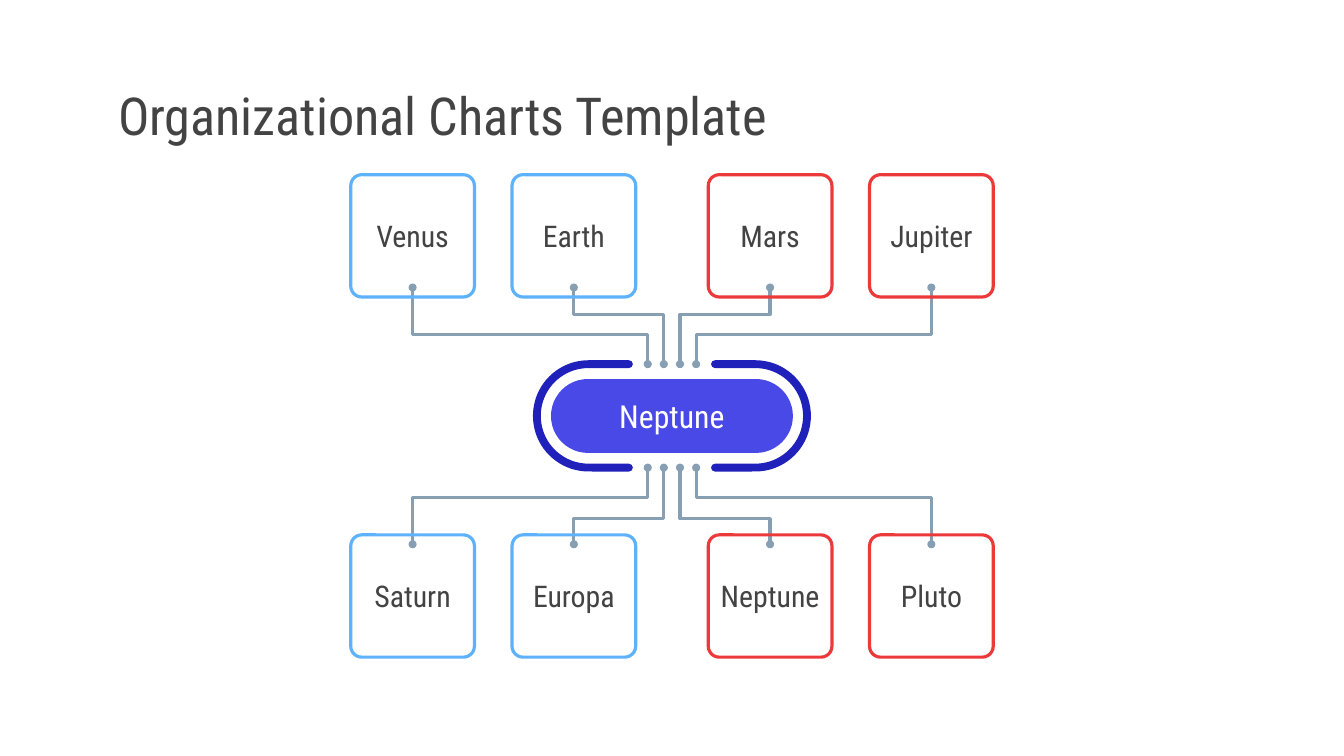
from dataclasses import dataclass
from math import cos, pi, sin

from lxml import etree
from pptx import Presentation
from pptx.dml.color import RGBColor
from pptx.enum.shapes import MSO_SHAPE
from pptx.enum.text import MSO_ANCHOR, PP_ALIGN
from pptx.oxml.ns import qn
from pptx.shapes.autoshape import Shape
from pptx.slide import Slide
from pptx.util import Inches, Pt

ROUNDED = MSO_SHAPE.ROUNDED_RECTANGLE
OVAL = MSO_SHAPE.OVAL
MIDDLE = MSO_ANCHOR.MIDDLE
LEFT, CENTER = PP_ALIGN.LEFT, PP_ALIGN.CENTER

WHITE = RGBColor(0xFF, 0xFF, 0xFF)
DARK_GRAY = RGBColor(0x43, 0x43, 0x43)
SLATE = RGBColor(0x86, 0x9F, 0xB2)
SKY = RGBColor(0x5E, 0xB2, 0xFC)
RED = RGBColor(0xEC, 0x3A, 0x3B)
VIOLET = RGBColor(0x49, 0x49, 0xE7)
NAVY = RGBColor(0x20, 0x20, 0xBA)

FONT = "Roboto Condensed"
SLIDE_WIDTH = Inches(10)
SLIDE_HEIGHT = SLIDE_WIDTH * 9 // 16
BOX_WIDTH, BOX_HEIGHT = 0.92, 0.91
DOT_SIZE = 0.06
LINE_WIDTH = 1.7
RING_WIDTH = 4.2
ARC_STEPS = 40

Point = tuple[float, float]


@dataclass(frozen=True)
class Column:
    box_x: float
    port_x: float
    color: RGBColor
    outer: bool


@dataclass(frozen=True)
class Row:
    names: tuple[str, ...]
    box_top: float
    dot_y: float
    outer_bend_y: float
    inner_bend_y: float
    port_y: float


COLUMNS = (
    Column(3.07, 4.82, SKY, True),
    Column(4.27, 4.94, SKY, False),
    Column(5.73, 5.06, RED, False),
    Column(6.93, 5.18, RED, True),
)
ROWS = (
    Row(("Venus", "Earth", "Mars", "Jupiter"), 1.3, 2.14, 2.49, 2.34, 2.71),
    Row(("Saturn", "Europa", "Neptune", "Pluto"), 3.98, 4.05, 3.7, 3.86, 3.48),
)


def write_text(shape: Shape, text: str, size: float, color: RGBColor,
               alignment: PP_ALIGN, margin: float = 0) -> None:
    frame = shape.text_frame
    frame_format = {"word_wrap": True, "vertical_anchor": MIDDLE}
    for side in ("left", "right", "top", "bottom"):
        frame_format[f"margin_{side}"] = Inches(margin)
    for name, value in frame_format.items():
        setattr(frame, name, value)
    paragraph = frame.paragraphs[0]
    paragraph.alignment = alignment
    run = paragraph.add_run()
    run.text = text
    for name, value in {"name": FONT, "size": Pt(size)}.items():
        setattr(run.font, name, value)
    run.font.color.rgb = color


def add_filled(slide: Slide, kind: MSO_SHAPE, left: float, top: float,
               width: float, height: float, color: RGBColor) -> Shape:
    shape = slide.shapes.add_shape(
        kind, Inches(left), Inches(top), Inches(width), Inches(height))
    shape.shadow.inherit = False
    shape.fill.solid()
    shape.fill.fore_color.rgb = color
    shape.line.fill.background()
    return shape


def add_path(slide: Slide, points: list[Point], color: RGBColor, width: float) -> None:
    corners = [(Inches(x), Inches(y)) for x, y in points]
    builder = slide.shapes.build_freeform(*corners[0])
    builder.add_line_segments(corners[1:], close=False)
    shape = builder.convert_to_shape()
    shape.shadow.inherit = False
    shape.fill.background()
    shape.line.color.rgb = color
    shape.line.width = Pt(width)
    outline = shape.line._get_or_add_ln()
    outline.set("cap", "rnd")
    etree.SubElement(outline, qn("a:round"))


def add_link(slide: Slide, column: Column, row: Row) -> None:
    bend_y = row.outer_bend_y if column.outer else row.inner_bend_y
    start, end = (column.box_x, row.dot_y), (column.port_x, row.port_y)
    add_path(slide, [start, (start[0], bend_y), (end[0], bend_y), end],
             SLATE, LINE_WIDTH)
    for x, y in (start, end):
        add_filled(slide, OVAL, x - DOT_SIZE / 2, y - DOT_SIZE / 2,
                   DOT_SIZE, DOT_SIZE, SLATE)


def add_box(slide: Slide, name: str, column: Column, row: Row) -> None:
    shape = add_filled(slide, ROUNDED, column.box_x - BOX_WIDTH / 2, row.box_top,
                       BOX_WIDTH, BOX_HEIGHT, WHITE)
    shape.adjustments[0] = 0.09
    shape.fill.background()
    shape.line.color.rgb = column.color
    shape.line.width = Pt(LINE_WIDTH)
    write_text(shape, name, 16, DARK_GRAY, CENTER)


def add_ring_half(slide: Slide, center_x: float, direction: int) -> None:
    top, bottom = ROWS[0].port_y, ROWS[1].port_y
    radius, center_y = (bottom - top) / 2, (top + bottom) / 2
    tip_x = center_x - direction * 0.3
    angles = [pi * step / ARC_STEPS - pi / 2 for step in range(ARC_STEPS + 1)]
    arc = [(center_x + direction * radius * cos(angle), center_y + radius * sin(angle))
           for angle in angles]
    add_path(slide, [(tip_x, top), *arc, (tip_x, bottom)], NAVY, RING_WIDTH)


def main() -> None:
    presentation = Presentation()
    presentation.slide_width = SLIDE_WIDTH
    presentation.slide_height = SLIDE_HEIGHT
    slide = presentation.slides.add_slide(presentation.slide_layouts[6])

    title = slide.shapes.add_textbox(
        Inches(0.78), Inches(0.59), Inches(8.45), Inches(0.53))
    write_text(title, "Organizational Charts Template", 28, DARK_GRAY, LEFT, 0.1)

    hub = add_filled(slide, ROUNDED, 4.1, 2.82, 1.8, 0.55, VIOLET)
    hub.adjustments[0] = 0.5
    write_text(hub, "Neptune", 17, WHITE, CENTER)
    add_ring_half(slide, 4.38, -1)
    add_ring_half(slide, 5.62, 1)

    for row in ROWS:
        for name, column in zip(row.names, COLUMNS):
            add_link(slide, column, row)
            add_box(slide, name, column, row)

    presentation.save("out.pptx")


if __name__ == "__main__":
    main()
